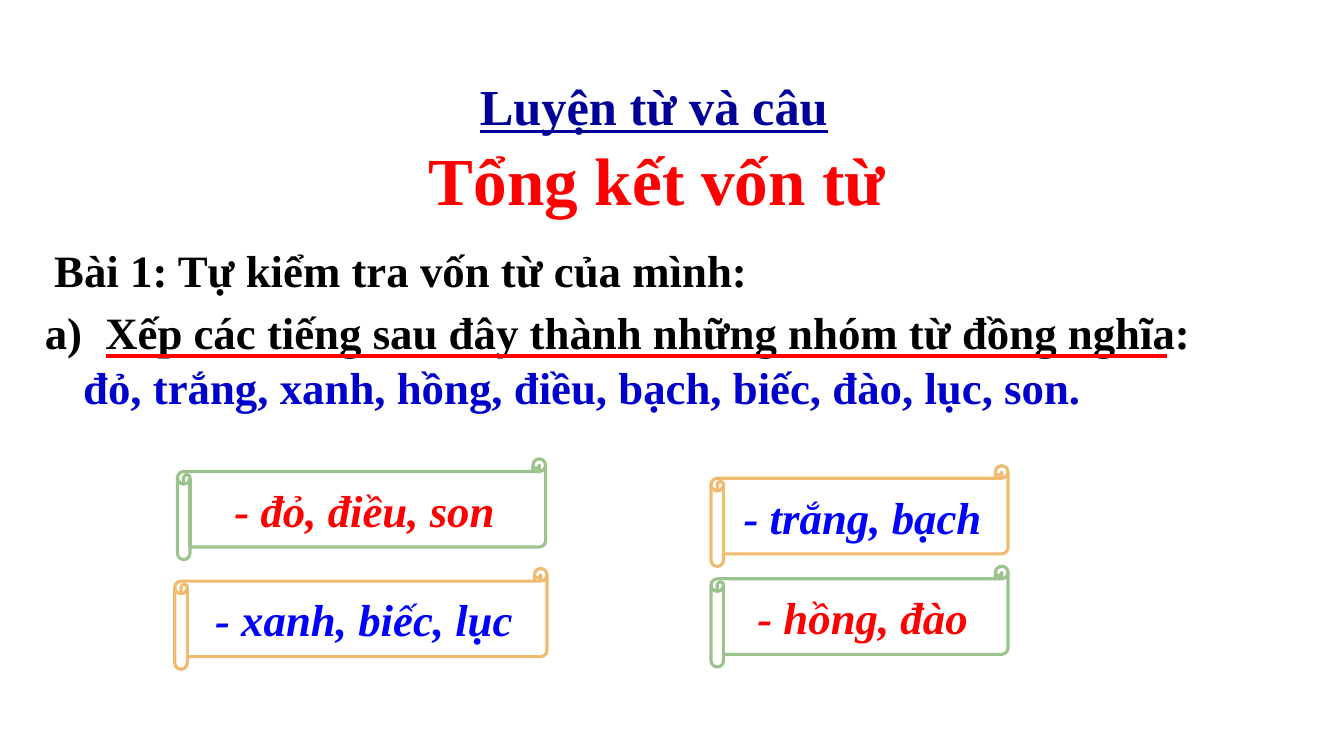
from lxml.etree import SubElement
from pptx import Presentation
from pptx.dml.color import RGBColor
from pptx.enum.shapes import MSO_CONNECTOR, MSO_SHAPE
from pptx.enum.text import MSO_ANCHOR, PP_ALIGN
from pptx.oxml.ns import qn
from pptx.util import Inches, Pt

COLORS = {
    "black": "000000",
    "red": "FF0000",
    "blue": "0000FF",
    "word blue": "0000CC",
    "navy": "000099",
    "green line": "9CC38D",
    "orange line": "F0BB6E",
}


class LessonSlide:
    """Draws on one slide; positions and sizes are percentages of the slide."""

    font_name = "Times New Roman"
    body_size = 32
    line_width = Pt(2.25)

    def __init__(self, presentation):
        self.width = presentation.slide_width
        self.height = presentation.slide_height
        self.slide = presentation.slides.add_slide(presentation.slide_layouts[6])

    def across(self, share):
        return round(self.width * share / 100)

    def down(self, share):
        return round(self.height * share / 100)

    def box(self, left, top, width, height):
        return self.across(left), self.down(top), self.across(width), self.down(height)

    def color(self, name):
        return RGBColor.from_string(COLORS[name])

    def style(self, paragraph, color, size=body_size, align=PP_ALIGN.LEFT,
              italic=False, underline=False):
        paragraph.alignment = align
        for run in paragraph.runs:
            font = run.font
            font.name = self.font_name
            font.size = Pt(size)
            font.bold = True
            font.italic = italic
            font.underline = underline
            font.color.rgb = self.color(color)

    def text(self, bounds, lines, **style):
        """Adds a text box; lines holds (wording, color) pairs."""
        frame = self.slide.shapes.add_textbox(*self.box(*bounds)).text_frame
        frame.word_wrap = True
        frame.text = "\n".join(wording for wording, _ in lines)
        for paragraph, (_, color) in zip(frame.paragraphs, lines):
            self.style(paragraph, color, **style)
        return frame

    def indent(self, paragraph, margin, lettered=False):
        """Sets the left margin in inches, with a hanging letter if asked."""
        properties = paragraph._p.get_or_add_pPr()
        properties.set("marL", str(Inches(margin)))
        properties.set("indent", str(-Inches(margin) if lettered else 0))
        if lettered:
            SubElement(properties, qn("a:buFont"), typeface=self.font_name)
            SubElement(properties, qn("a:buAutoNum"), type="alphaLcParenR")

    def rule(self, start, end, top, color):
        line = self.slide.shapes.add_connector(
            MSO_CONNECTOR.STRAIGHT, self.across(start), self.down(top),
            self.across(end), self.down(top))
        line.line.color.rgb = self.color(color)
        line.line.width = self.line_width
        SubElement(line._element.spPr, qn("a:effectLst"))

    def scroll(self, bounds, wording, color, outline):
        shape = self.slide.shapes.add_shape(
            MSO_SHAPE.HORIZONTAL_SCROLL, *self.box(*bounds))
        shape.shadow.inherit = False
        shape.fill.background()
        shape.line.color.rgb = self.color(outline)
        shape.line.width = self.line_width
        frame = shape.text_frame
        frame.word_wrap = False
        frame.vertical_anchor = MSO_ANCHOR.MIDDLE
        frame.text = wording
        self.style(frame.paragraphs[0], color, align=PP_ALIGN.CENTER, italic=True)


def main():
    presentation = Presentation()
    presentation.slide_width = Inches(13.33)
    presentation.slide_height = Inches(7.5)
    lesson = LessonSlide(presentation)

    lesson.text((3.3, 31.5, 81.6, 8.4),
                [("Bài 1: Tự kiểm tra vốn từ của mình:", "black")])
    task = lesson.text((2.6, 39.6, 90.2, 15.6), [
        ("Xếp các tiếng sau đây thành những nhóm từ đồng nghĩa:", "black"),
        ("đỏ, trắng, xanh, hồng, điều, bạch, biếc, đào, lục, son.", "word blue"),
    ])
    instruction, words = task.paragraphs
    lesson.indent(instruction, 0.6, lettered=True)
    lesson.indent(words, 0.38)
    words.space_before = Pt(1.5)
    lesson.rule(7.9, 86.85, 47.1, "red")

    lesson.text((12.4, 17.6, 73, 12), [("Tổng kết vốn từ", "red")],
                size=48, align=PP_ALIGN.CENTER)

    scroll_height = 13.33
    for left, top, width, wording, color, outline in (
        (13.2, 60.7, 27.4, "- đỏ, điều, son", "red", "green line"),
        (52.9, 61.6, 22.1, "- trắng, bạch", "blue", "orange line"),
        (52.9, 74.9, 22.1, "- hồng, đào", "red", "green line"),
        (13, 75.2, 27.7, "- xanh, biếc, lục", "blue", "orange line"),
    ):
        lesson.scroll((left, top, width, scroll_height), wording, color, outline)

    lesson.text((32.25, 9.3, 32.8, 9.3), [("Luyện từ và câu", "navy")],
                size=36, align=PP_ALIGN.CENTER, underline=True)
    presentation.save("out.pptx")


if __name__ == "__main__":
    main()
